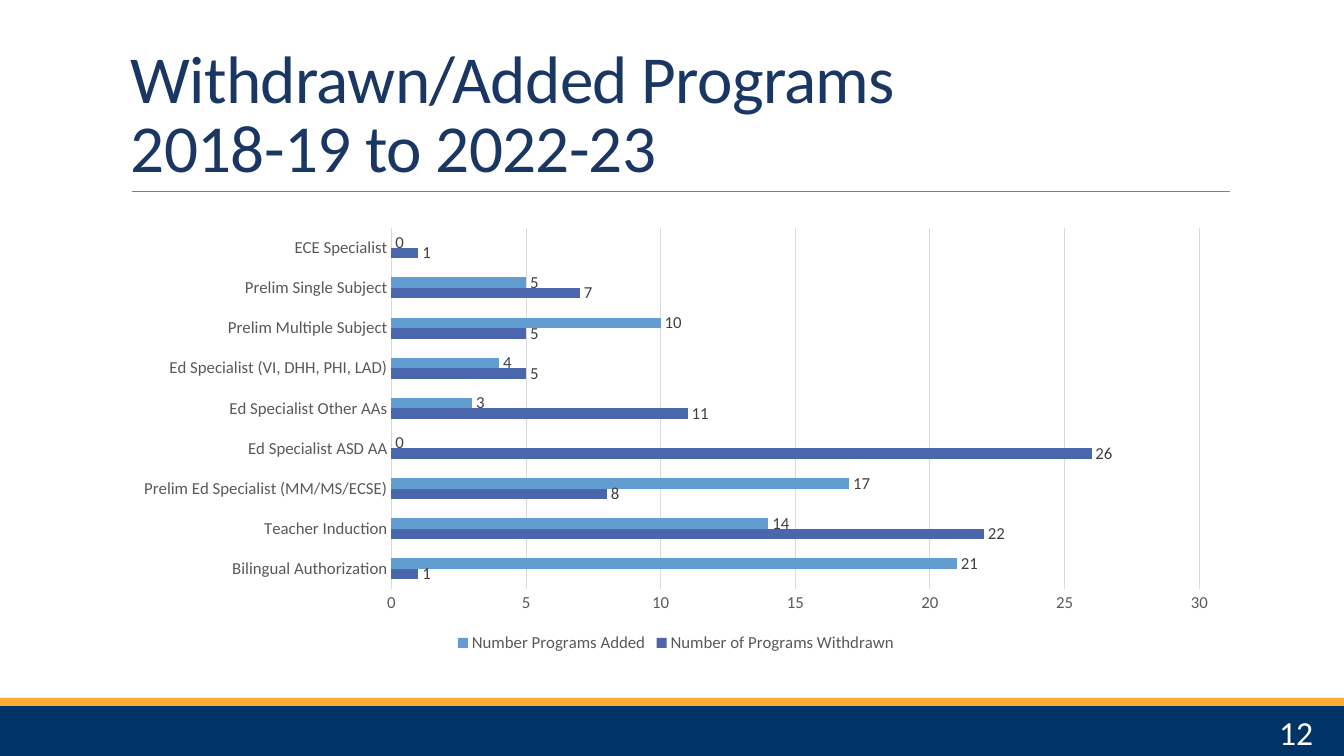
from lxml import etree
from pptx import Presentation
from pptx.chart.data import CategoryChartData
from pptx.dml.color import RGBColor
from pptx.enum.chart import XL_CHART_TYPE, XL_LABEL_POSITION, XL_LEGEND_POSITION, XL_TICK_MARK
from pptx.enum.shapes import MSO_CONNECTOR, MSO_SHAPE
from pptx.enum.text import MSO_ANCHOR, PP_ALIGN
from pptx.oxml.ns import qn
from pptx.util import Pt

PX = 12192000 / 1344
FONT = "Calibri"
COLORS = {
    "navy": "003366", "gold": "FAAC35", "rule": "808080", "title": "1A3763",
    "white": "FFFFFF", "axis": "595959", "grid": "D9D9D9", "label": "404040",
    "withdrawn": "4A66AC", "added": "629DD1",
}


def px(*lengths):
    return [round(length * PX) for length in lengths]


def style_font(font, size, color):
    font.name = FONT
    font.size = Pt(size)
    font.color.rgb = RGBColor.from_string(COLORS[color])


presentation = Presentation()
presentation.slide_width, presentation.slide_height = px(1344, 756)
slide = presentation.slides.add_slide(presentation.slide_layouts[6])

for color, top, height in [("navy", 706, 50), ("gold", 698, 8)]:
    band = slide.shapes.add_shape(MSO_SHAPE.RECTANGLE, *px(0, top, 1344, height))
    band.shadow.inherit = False
    band.fill.solid()
    band.fill.fore_color.rgb = RGBColor.from_string(COLORS[color])
    band.line.fill.background()

rule = slide.shapes.add_connector(MSO_CONNECTOR.STRAIGHT, *px(132, 191, 1230, 191))
rule.line.color.rgb = RGBColor.from_string(COLORS["rule"])
rule.line.width = Pt(0.5)
etree.SubElement(rule._element.spPr, qn("a:effectLst"))

title = slide.shapes.add_textbox(*px(121, 31, 1109, 160))
title.text_frame.word_wrap = True
title.text_frame.vertical_anchor = MSO_ANCHOR.BOTTOM
paragraph = title.text_frame.paragraphs[0]
paragraph.line_spacing = 0.85
for index, line in enumerate(["Withdrawn/Added Programs", "2018-19 to 2022-23"]):
    if index:
        paragraph.add_line_break()
    run = paragraph.add_run()
    run.text = line
    style_font(run.font, 48, "title")
    run.font._element.set("spc", "-50")

programs = [
    ("Bilingual Authorization", 1, 21),
    ("Teacher Induction", 22, 14),
    ("Prelim Ed Specialist (MM/MS/ECSE)", 8, 17),
    ("Ed Specialist ASD AA", 26, 0),
    ("Ed Specialist Other AAs", 11, 3),
    ("Ed Specialist (VI, DHH, PHI, LAD)", 5, 4),
    ("Prelim Multiple Subject", 5, 10),
    ("Prelim Single Subject", 7, 5),
    ("ECE Specialist", 1, 0),
]
names, withdrawn, added = zip(*programs)
chart_data = CategoryChartData()
chart_data.categories = names
chart_data.add_series("Number of Programs Withdrawn", withdrawn)
chart_data.add_series("Number Programs Added", added)
chart = slide.shapes.add_chart(
    XL_CHART_TYPE.BAR_CLUSTERED, *px(122, 219, 1108, 438), chart_data
).chart
chart.has_title = False
style_font(chart.font, 12, "axis")
chart.has_legend = True
chart.legend.position = XL_LEGEND_POSITION.BOTTOM
chart.legend.include_in_layout = False
style_font(chart.legend.font, 12, "axis")

for axis in (chart.category_axis, chart.value_axis):
    axis.major_tick_mark = XL_TICK_MARK.NONE
    axis.minor_tick_mark = XL_TICK_MARK.NONE
    style_font(axis.tick_labels.font, 12, "axis")
chart.value_axis.minimum_scale = 0
chart.value_axis.maximum_scale = 30
chart.value_axis.major_unit = 5
chart.value_axis.has_major_gridlines = True
chart.value_axis.format.line.fill.background()
for grid_format in (chart.category_axis.format, chart.value_axis.major_gridlines.format):
    grid_format.line.color.rgb = RGBColor.from_string(COLORS["grid"])
    grid_format.line.width = Pt(0.75)

plot = chart.plots[0]
plot.gap_width = 182
plot.overlap = 0
plot.vary_by_categories = False
for series, color in zip(plot.series, ["withdrawn", "added"]):
    series.format.fill.solid()
    series.format.fill.fore_color.rgb = RGBColor.from_string(COLORS[color])
    labels = series.data_labels
    labels.show_value = True
    labels.position = XL_LABEL_POSITION.OUTSIDE_END
    style_font(labels.font, 12, "label")

page_number = slide.shapes.add_textbox(*px(1179, 712, 144, 40))
page_number.text_frame.word_wrap = True
page_number.text_frame.vertical_anchor = MSO_ANCHOR.MIDDLE
paragraph = page_number.text_frame.paragraphs[0]
paragraph.alignment = PP_ALIGN.RIGHT
run = paragraph.add_run()
run.text = "12"
style_font(run.font, 24, "white")

presentation.save("out.pptx")
